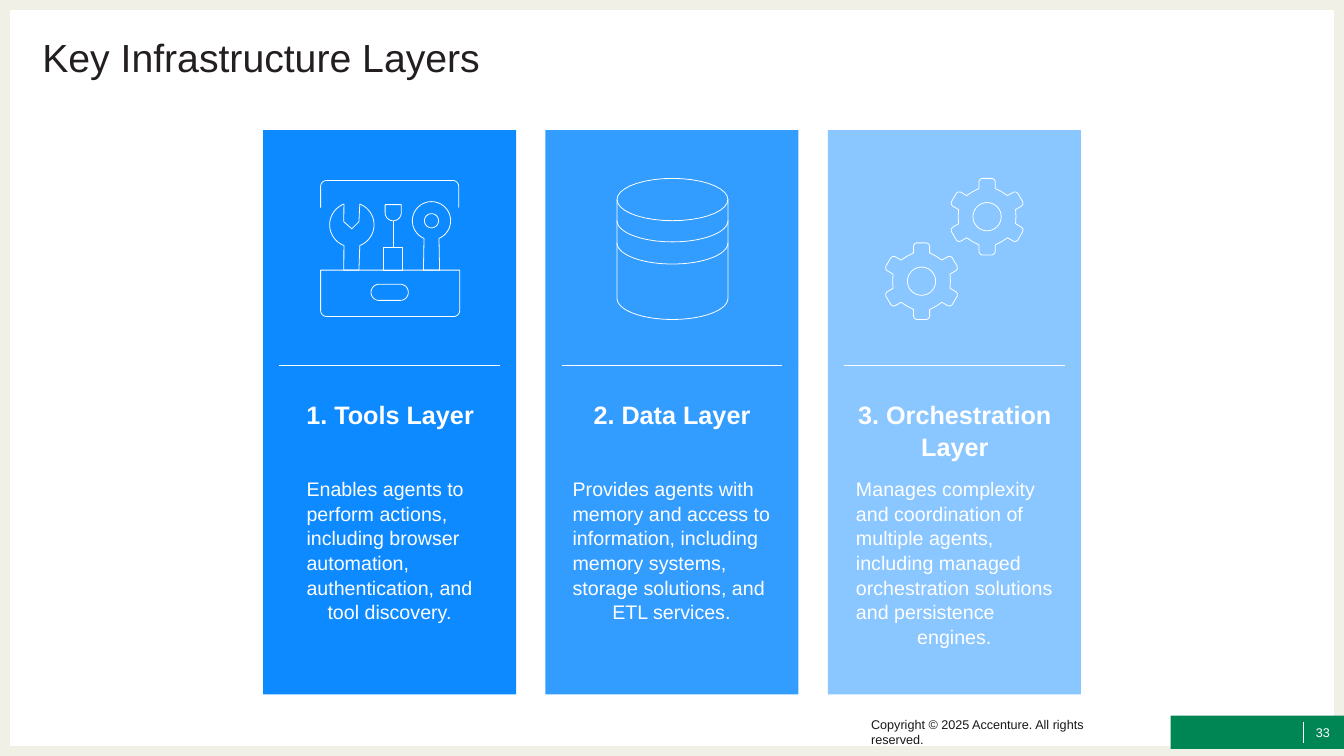
from math import cos, radians, sin

from pptx import Presentation
from pptx.dml.color import RGBColor
from pptx.enum.shapes import MSO_CONNECTOR, MSO_SHAPE
from pptx.enum.text import MSO_ANCHOR, PP_ALIGN
from pptx.oxml.ns import qn
from pptx.util import Pt
from lxml.etree import SubElement

PX = 9144  # 100 px to the inch
FONT = "Arial"
WHITE = "FFFFFF"
CARD_LEFT, CARD_PITCH, CARD_WIDTH = 261, 280, 251
LEFT, CENTER = PP_ALIGN.LEFT, PP_ALIGN.CENTER


def px(*lengths):
    return [round(n * PX) for n in lengths]


def color(value):
    return RGBColor.from_string(value)


# Basic elements
def add_rect(s, box, fill):
    sp = s.shapes.add_shape(MSO_SHAPE.RECTANGLE, *px(*box))
    sp.shadow.inherit = False
    sp.fill.solid()
    sp.fill.fore_color.rgb = color(fill)
    sp.line.fill.background()


def add_line(s, ends, width):
    line = s.shapes.add_connector(MSO_CONNECTOR.STRAIGHT, *px(*ends))
    line.line.color.rgb = color(WHITE)
    line.line.width = Pt(width)
    SubElement(line._element.spPr, qn("a:effectLst"))


def clear_margins(tf, anchor):
    tf.margin_left = tf.margin_right = tf.margin_top = tf.margin_bottom = 0
    tf.vertical_anchor = anchor


def fill_paragraph(p, lines, size, fill, align, bold=False, spacing=None):
    p.alignment = align
    p.line_spacing = spacing
    for i, line in enumerate(lines):
        if i:
            p.add_line_break()
        r = p.add_run()
        r.text = line
        r.font.name, r.font.size, r.font.bold = FONT, Pt(size), bold
        r.font.color.rgb = color(fill)


def add_text(s, box, anchor=MSO_ANCHOR.TOP):
    tf = s.shapes.add_textbox(*px(*box)).text_frame
    tf.word_wrap = False
    clear_margins(tf, anchor)
    return tf


def add_outline(s, strokes):
    start, *rest = strokes
    builder = s.shapes.build_freeform(*px(*start[0]), scale=1.0)
    builder.add_line_segments([px(*pt) for pt in start[1:]], close=False)
    for stroke in rest:
        builder.move_to(*px(*stroke[0]))
        builder.add_line_segments([px(*pt) for pt in stroke[1:]], close=False)
    sp = builder.convert_to_shape()
    sp.shadow.inherit = False
    sp.fill.background()
    sp.line.color.rgb = color(WHITE)
    sp.line.width = Pt(0.56)


# Strokes of the icons; angles run clockwise from the right
def arc(cx, cy, rx, ry, start=0, end=360, steps=36):
    angles = [radians(start + (end - start) * i / steps) for i in range(steps + 1)]
    return [(cx + rx * cos(a), cy + ry * sin(a)) for a in angles]


def corner(cx, cy, start):
    return arc(cx, cy, 6, 6, start, start + 90, 6)


def toolbox():
    lid = [(318, 206), *corner(324, 185, 180), *corner(449, 185, 270), (455, 206)]
    case = [(318, 268), (456, 268), *corner(450, 308, 0), *corner(324, 308, 90), (318, 268)]
    handle = [*arc(376, 290, 8, 8, 90, 270), *arc(397, 290, 8, 8, -90, 90), (376, 298)]
    wrench = [(356, 268), (341, 268), *arc(349, 223, 22, 22, 111, 249), (341, 220),
              (349, 227), (356, 220), *arc(349, 223, 22, 22, -69, 69), (356, 268)]
    grip = [(380, 245), (399, 245), (399, 268), (380, 268), (380, 245)]
    tip = [(382, 203), (398, 203), *arc(390, 211, 8, 8, 0, 180), (382, 203)]
    shaft = [(390, 219), (390, 245)]
    spanner = [(436, 268), (420, 268), *arc(428, 219, 19, 19, 113, 427), (436, 268)]
    return [lid, case, handle, wrench, grip, tip, shaft, spanner, arc(428, 219, 7, 7)]


def database():
    cx, rx, ry = 667, 55, 21
    side = [(cx + rx, 198), *arc(cx, 296, rx, ry, 0, 180), (cx - rx, 198)]
    bands = [arc(cx, y, rx, ry, 0, 180) for y in (219, 241)]
    return [arc(cx, 198, rx, ry), side, *bands]


def gear(cx, cy):
    tooth = [(-8, -28), (-8, -35), (-7, -37), (-5, -38), (5, -38),
             (7, -37), (8, -35), (8, -28), (14, -25)]
    rim = []
    for i in range(6):
        c, n = cos(radians(60 * i)), sin(radians(60 * i))
        rim += [(cx + x * c - y * n, cy + x * n + y * c) for x, y in tooth]
    return [rim + rim[:1], arc(cx, cy, 14, 14)]


def gears():
    return gear(914, 279) + gear(979, 215)


# Slide parts
def add_title(s, text):
    title = s.shapes.title
    title.left, title.top, title.width, title.height = px(42, 42, 1268, 35)
    tf = title.text_frame
    clear_margins(tf, MSO_ANCHOR.TOP)
    fill_paragraph(tf.paragraphs[0], [text], 28, "231F20", LEFT, spacing=0.8)
    s.shapes._spTree.append(title._element)  # in front of the frame


def add_footer(s):
    add_rect(s, (1161, 710, 172, 33), "008555")
    add_line(s, (1293, 716, 1293, 737), 1)
    tf = add_text(s, (1303, 717, 18, 20), MSO_ANCHOR.MIDDLE)
    fill_paragraph(tf.paragraphs[0], ["33"], 9, WHITE, CENTER)
    tf = add_text(s, (864, 716, 266, 21), MSO_ANCHOR.MIDDLE)
    fill_paragraph(tf.paragraphs[0], ["Copyright © 2025 Accenture. All rights reserved."],
                   9, "181818", LEFT)


def add_card(s, index, fill, icon, heading, heading_box, lines, lines_box):
    left = CARD_LEFT + index * CARD_PITCH
    add_rect(s, (left, 129, CARD_WIDTH, 236), fill)
    add_rect(s, (left, 365, CARD_WIDTH, 324), fill)
    add_line(s, (left + 16, 363, left + 235, 363), 0.56)
    add_outline(s, icon)
    tf = add_text(s, heading_box)
    fill_paragraph(tf.paragraphs[0], heading, 18, WHITE, CENTER, True, 1.05)
    # The last line stands centred under the left-aligned ones
    tf = add_text(s, lines_box)
    fill_paragraph(tf.paragraphs[0], lines[:-1], 14, WHITE, LEFT, spacing=1.05)
    fill_paragraph(tf.add_paragraph(), lines[-1:], 14, WHITE, CENTER, spacing=1.05)


def main():
    prs = Presentation()
    prs.slide_width, prs.slide_height = px(1333, 750)
    s = prs.slides.add_slide(prs.slide_layouts[5])

    # Frame
    add_rect(s, (0, 0, 1333, 750), "F0F0E6")
    add_rect(s, (10, 10, 1313, 730), WHITE)
    add_footer(s)
    add_title(s, "Key Infrastructure Layers")

    # Layers
    cards = [
        ("0D8AFF", toolbox(), ["1. Tools Layer"], (303, 395, 168, 30),
         ["Enables agents to", "perform actions,", "including browser", "automation,",
          "authentication, and", "tool discovery."], (304, 472, 165, 141)),
        ("329CFF", database(), ["2. Data Layer"], (588, 395, 157, 30),
         ["Provides agents with", "memory and access to", "information, including",
          "memory systems,", "storage solutions, and", "ETL services."], (568, 472, 197, 141)),
        ("8AC6FF", gears(), ["3. Orchestration", "Layer"], (850, 395, 194, 61),
         ["Manages complexity", "and coordination of", "multiple agents,",
          "including managed", "orchestration solutions", "and persistence", "engines."],
         (849, 472, 196, 165)),
    ]
    for index, card in enumerate(cards):
        add_card(s, index, *card)

    prs.save("out.pptx")


if __name__ == "__main__":
    main()
